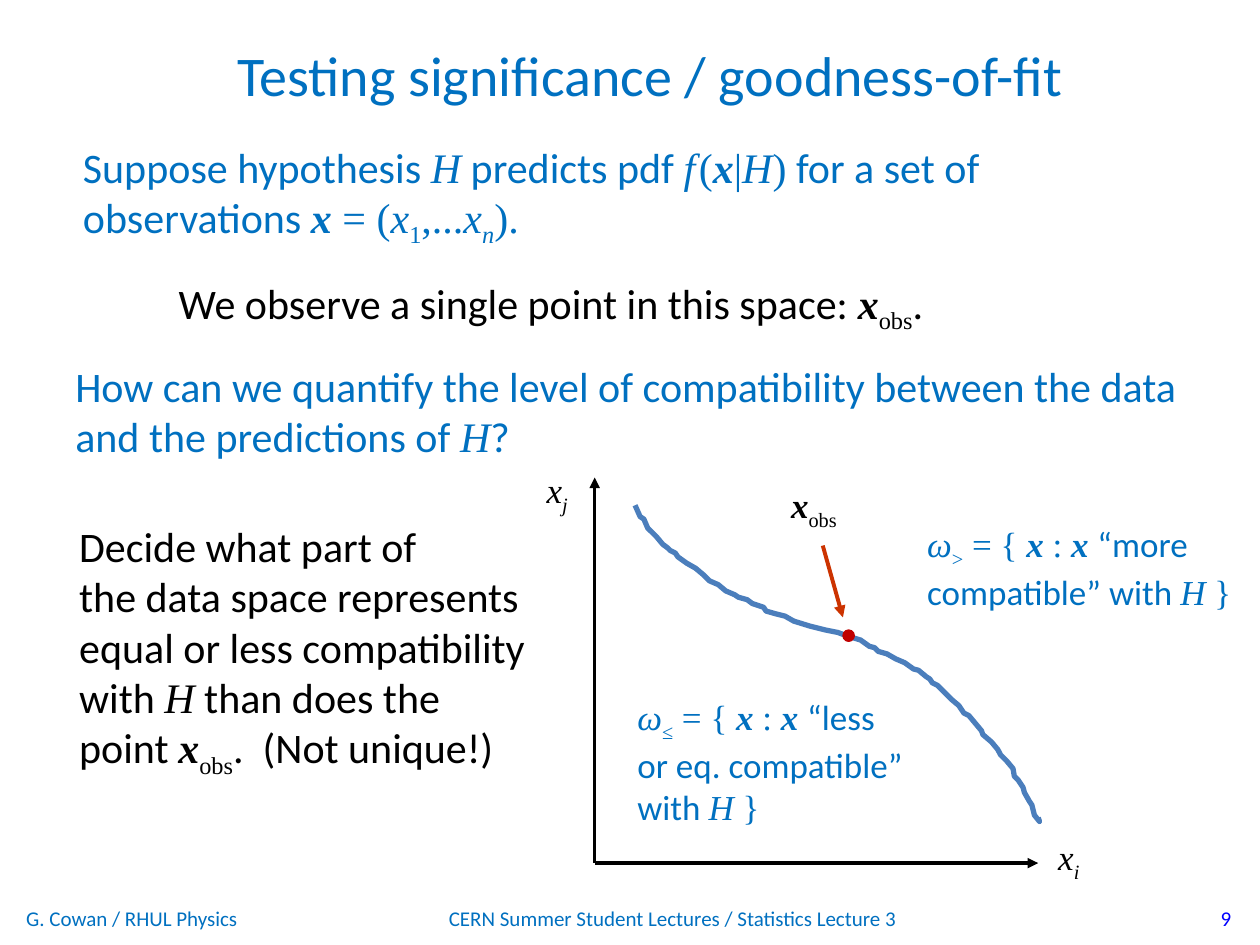
import pptx
import pptx.util
import pptx.dml.color
import pptx.enum.text
import pptx.enum.shapes
import pptx.oxml.ns
from lxml import etree

Inches, Pt = pptx.util.Inches, pptx.util.Pt
ALIGN = pptx.enum.text.PP_ALIGN
ANCHOR = pptx.enum.text.MSO_ANCHOR
FIT = pptx.enum.text.MSO_AUTO_SIZE
SHAPE = pptx.enum.shapes.MSO_SHAPE
LINE = pptx.enum.shapes.MSO_CONNECTOR

COLORS = {"blue": "0070C0", "page": "0000FF", "black": "000000",
          "curve": "4B7EBC", "arrow": "CC3300", "dot": "C00000"}

# A run is (text, style): m = maths font, i = italic, b = bold,
# s = subscript, t = thin (8 pt); no letters = plain Calibri.
X, H = ("x", "mbi"), ("H", "mi")
OBS = [X, ("obs", "ms")]


def omega(sign, word):
    return [("ω", "mi"), (sign, "ms"), (" = { ", "m"), X, (" : ", "m"),
            ("x ", "mbi"), (word, "")]


# box, size, colour, align, wrap, paragraphs
FOOT = [
    ((7.54, 7.09, 2.33, 0.4), 12, "page", "RIGHT", True, [[("9", "")]]),
    ((0.11, 7.09, 2.33, 0.4), 12, "blue", "LEFT", True,
     [[("G. Cowan / RHUL Physics", "")]]),
    ((2.26, 7.09, 6.16, 0.4), 12, "blue", "CENTER", True,
     [[("CERN Summer Student Lectures / Statistics Lecture 3", "")]]),
]
TITLE = ((1.38, 0.27, 7.56, 0.47), 32, "blue", "CENTER", True,
         [[("Testing significance / goodness-of-fit", "")]])
BODY = [
    ((0.56, 1.07, 7.45, 0.91), 24, "blue", "LEFT", False, [
        [("Suppose hypothesis ", ""), H, (" predicts pdf ", ""), ("f", "mi"),
         (" ", "mt"), ("(", "m"), X, ("|", "m"), H, (")", "m"),
         (" for a set of", "")],
        [("observations ", ""), X, (" = (", "m"), ("x", "mi"), ("1", "ms"),
         (",...", "m"), ("x", "mi"), ("n", "mis"), (").", "m")]]),
    ((1.32, 2.15, 6.28, 0.5), 24, "black", "LEFT", False, [
        [("We observe a single point in this space: ", ""), *OBS, (".", "")]]),
    ((0.5, 2.81, 9.27, 0.91), 24, "blue", "LEFT", True, [
        [("How can we quantify the level of compatibility between the data "
          "and the predictions of ", ""), H, ("?", "")]]),
    ((0.53, 4.08, 3.82, 2.12), 24, "black", "LEFT", True, [
        [("Decide what part of", "")],
        [("the data space represents equal or less compatibility with ", ""),
         H, (" than does the point ", ""), *OBS, (".  (Not unique!)", "")]]),
]
LABELS = [
    ((4.96, 5.47, 2.88, 1.11), 20, "blue", "LEFT", True, [
        omega("≤", "“less"), [("or eq. compatible”", "")],
        [("with ", ""), H, (" }", "m")]]),
    ((7.26, 4.1, 2.71, 0.77), 20, "blue", "LEFT", True, [
        omega(">", "“more"), [("compatible” with ", ""), H, (" }", "m")]]),
    ((6.18, 3.79, 0.6, 0.44), 20, "black", "LEFT", False, [OBS]),
    ((8.3, 6.58, 0.38, 0.44), 20, "black", "LEFT", False,
     [[("x", "mi"), ("i", "mis")]]),
    ((4.24, 3.67, 0.38, 0.44), 20, "black", "LEFT", False,
     [[("x", "mi"), ("j", "mis")]]),
]

CURVE = [
    (5.04, 4.01), (5.08, 4.1), (5.11, 4.12), (5.14, 4.19), (5.21, 4.26),
    (5.26, 4.32), (5.3, 4.35), (5.32, 4.37), (5.36, 4.39), (5.38, 4.42),
    (5.45, 4.47), (5.52, 4.51), (5.58, 4.56), (5.63, 4.61), (5.7, 4.64),
    (5.76, 4.69), (5.83, 4.72), (5.86, 4.74), (5.93, 4.76), (5.97, 4.79),
    (6.06, 4.82), (6.08, 4.85), (6.15, 4.87), (6.23, 4.89), (6.3, 4.93),
    (6.43, 4.97), (6.55, 5), (6.65, 5.02), (6.73, 5.05), (6.83, 5.08),
    (6.9, 5.13), (6.94, 5.14), (6.97, 5.17), (7.04, 5.19), (7.11, 5.23),
    (7.18, 5.26), (7.25, 5.31), (7.29, 5.32), (7.35, 5.37), (7.38, 5.39),
    (7.4, 5.42), (7.44, 5.44), (7.55, 5.55), (7.61, 5.6), (7.65, 5.66),
    (7.69, 5.68), (7.74, 5.74), (7.79, 5.8), (7.8, 5.83), (7.87, 5.89),
    (7.92, 5.95), (7.94, 5.99), (7.99, 6.04), (8.04, 6.1), (8.05, 6.16),
    (8.08, 6.19), (8.12, 6.25), (8.13, 6.29), (8.17, 6.36), (8.19, 6.39),
    (8.21, 6.47), (8.25, 6.52), (8.24, 6.49),
]
ORIGIN = (4.72, 6.85)
# start, end, colour, width
ARROWS = [
    ((6.53, 4.33), (6.69, 4.9), "arrow", 2.25),
    (ORIGIN, (8.24, 6.85), "black", 2),
    (ORIGIN, (4.72, 3.79), "black", 2),
]
DOT = (6.69, 5, 0.09, 0.09)


def rgb(name):
    return pptx.dml.color.RGBColor.from_string(COLORS[name])


def add_run(para, text, style, size, color):
    run = para.add_run()
    run.text = text
    font = run.font
    font.name = "Times New Roman" if "m" in style else "Calibri"
    font.size = Pt(8 if "t" in style else size)
    font.bold, font.italic = "b" in style, "i" in style
    font.color.rgb = rgb(color)
    if "s" in style:
        run._r.get_or_add_rPr().set("baseline", "-25000")


def add_text(slide, box, size, color, align, wrap, paras):
    frame = slide.shapes.add_textbox(*map(Inches, box)).text_frame
    frame.word_wrap = wrap
    for num, runs in enumerate(paras):
        para = frame.add_paragraph() if num else frame.paragraphs[0]
        para.alignment = getattr(ALIGN, align)
        for text, style in runs:
            add_run(para, text, style, size, color)
    return frame


def add_curve(slide):
    points = [(Inches(x), Inches(y)) for x, y in CURVE]
    pen = slide.shapes.build_freeform(*points[0])
    pen.add_line_segments(points[1:], close=False)
    curve = pen.convert_to_shape()
    curve.shadow.inherit = False
    curve.fill.background()
    curve.line.color.rgb = rgb("curve")
    curve.line.width = Pt(3)


def add_arrow(slide, start, end, color, width):
    arrow = slide.shapes.add_connector(
        LINE.STRAIGHT, *map(Inches, start + end))
    arrow.line.color.rgb = rgb(color)
    arrow.line.width = Pt(width)
    qn = pptx.oxml.ns.qn
    props = arrow._element.spPr
    etree.SubElement(props.find(qn("a:ln")), qn("a:tailEnd"), type="triangle")
    etree.SubElement(props, qn("a:effectLst"))


def add_dot(slide):
    dot = slide.shapes.add_shape(SHAPE.OVAL, *map(Inches, DOT))
    dot.shadow.inherit = False
    dot.fill.solid()
    dot.fill.fore_color.rgb = rgb("dot")
    dot.line.color.rgb = rgb("dot")


def main():
    deck = pptx.Presentation()
    deck.slide_width, deck.slide_height = Inches(10), Inches(7.5)
    slide = deck.slides.add_slide(deck.slide_layouts[6])
    for item in FOOT:
        add_text(slide, *item).vertical_anchor = ANCHOR.MIDDLE
    add_text(slide, *TITLE)
    for item in BODY:
        add_text(slide, *item).auto_size = FIT.SHAPE_TO_FIT_TEXT
    add_curve(slide)
    for item in ARROWS:
        add_arrow(slide, *item)
    add_dot(slide)
    for item in LABELS:
        add_text(slide, *item).auto_size = FIT.SHAPE_TO_FIT_TEXT
    deck.save("out.pptx")


if __name__ == "__main__":
    main()
